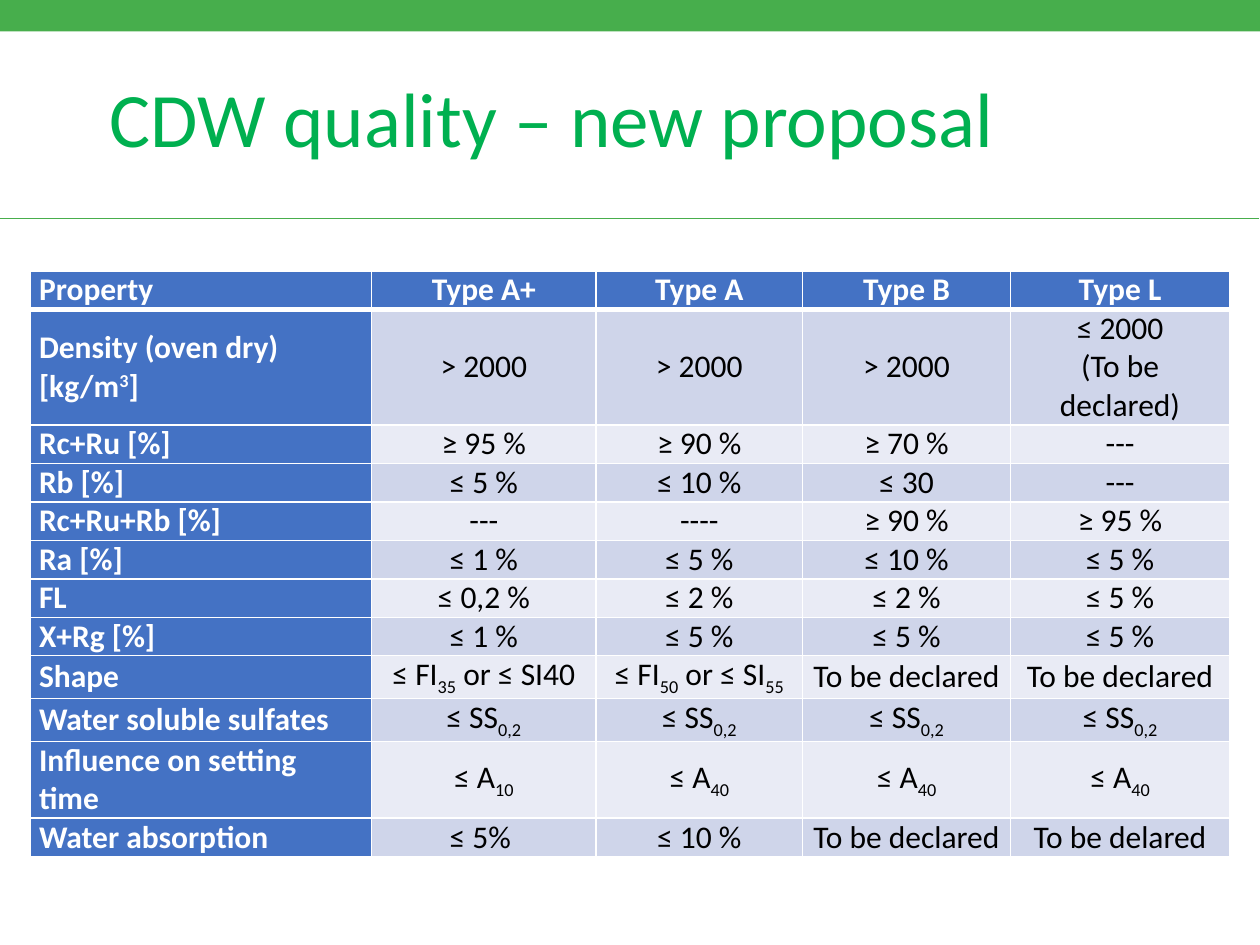
from lxml import etree
from pptx import Presentation
from pptx.dml.color import RGBColor
from pptx.enum.shapes import MSO_CONNECTOR, MSO_SHAPE
from pptx.enum.text import MSO_ANCHOR as Anchor, PP_ALIGN as Align
from pptx.oxml import parse_xml
from pptx.oxml.ns import nsdecls, qn
from pptx.util import Inches, Pt

BANNER_GREEN = "47AE4C"
BASELINES = {"_": "-25000", "^": "30000"}


def color(value):
    return RGBColor.from_string(value)


def write_text(frame, text, size=18, fill="000000", bold=False, align=Align.CENTER):
    paragraph = frame.paragraphs[0]
    paragraph.alignment = align
    for index, line in enumerate(text.split("\n")):
        if index:
            paragraph.add_line_break()
        for part in line.split("|"):
            run = paragraph.add_run()
            run.text = part.lstrip("_^")
            run.font.name = "Calibri"
            run.font.size = Pt(size)
            run.font.bold = bold
            run.font.color.rgb = color(fill)
            if part[:1] in BASELINES:
                run.font._element.set("baseline", BASELINES[part[0]])
    return paragraph


presentation = Presentation()
presentation.slide_width = Inches(10)
presentation.slide_height = Inches(7.5)
slide = presentation.slides.add_slide(presentation.slide_layouts[5])

banner = slide.shapes.add_shape(MSO_SHAPE.RECTANGLE, 0, 0, Inches(10), Inches(0.25))
banner.shadow.inherit = False
banner.fill.solid()
banner.fill.fore_color.rgb = color(BANNER_GREEN)
banner.line.fill.background()

divider = slide.shapes.add_connector(
    MSO_CONNECTOR.STRAIGHT, Inches(-0.01), Inches(1.73), Inches(9.99), Inches(1.73))
divider.line.color.rgb = color(BANNER_GREEN)
divider.line.width = Pt(0.5)
etree.SubElement(divider._element.spPr, qn("a:effectLst"))

title = slide.shapes.title
title.left, title.top = Inches(0.77), Inches(0.4)
title.width, title.height = Inches(8.54), Inches(1.14)
title.text_frame.vertical_anchor = Anchor.MIDDLE
heading = write_text(title.text_frame, "CDW quality – new proposal",
                     size=44, fill="00B050", align=Align.LEFT)
heading.line_spacing = 0.9

rows = [
    ["Property", "Type A+", "Type A", "Type B", "Type L"],
    ["Density (oven dry) [kg/m|^3|]", "> 2000", "> 2000", "> 2000", "≤ 2000\n(To be declared)"],
    ["Rc+Ru [%]", "≥ 95 %", "≥ 90 %", "≥ 70 %", "---"],
    ["Rb [%]", "≤ 5 %", "≤ 10 %", "≤ 30", "---"],
    ["Rc+Ru+Rb [%]", "---", "----", "≥ 90 %", "≥ 95 %"],
    ["Ra [%]", "≤ 1 %", "≤ 5 %", "≤ 10 %", "≤ 5 %"],
    ["FL", "≤ 0,2 %", "≤ 2 %", "≤ 2 %", "≤ 5 %"],
    ["X+Rg [%]", "≤ 1 %", "≤ 5 %", "≤ 5 %", "≤ 5 %"],
    ["Shape", "≤ FI|_35| or ≤ SI40", "≤ FI|_50| or ≤ SI|_55", "To be declared", "To be declared"],
    ["Water soluble sulfates"] + ["≤ SS|_0,2"] * 4,
    ["Influence on setting time", "≤ A|_10"] + ["≤ A|_40"] * 3,
    ["Water absorption", "≤ 5% ", "≤ 10 %", "To be declared", "To be delared"],
]
column_widths = [2.71, 1.78, 1.64, 1.65, 1.74]

table_frame = slide.shapes.add_table(
    len(rows), len(column_widths), Inches(0.24), Inches(2.15), Inches(9.52), Inches(4.5))
table = table_frame.table
table.first_col = True
for column, width in zip(table.columns, column_widths):
    column.width = Inches(width)

for row_index, texts in enumerate(rows):
    table.rows[row_index].height = Inches(0.56 if row_index == 1 else 0.21)
    for column_index, text in enumerate(texts):
        cell = table.cell(row_index, column_index)
        is_heading = row_index == 0 or column_index == 0
        cell.vertical_anchor = Anchor.MIDDLE
        cell.margin_left = cell.margin_right = Inches(0.07)
        cell.margin_top = cell.margin_bottom = 0
        for side in "LRTB":
            under_header = (row_index, side) in [(0, "B"), (1, "T")]
            width = Pt(3 if under_header else 1)
            cell._tc.get_or_add_tcPr().append(parse_xml(
                f'<a:ln{side} {nsdecls("a")} w="{width}"><a:solidFill>'
                f'<a:srgbClr val="FFFFFF"/></a:solidFill></a:ln{side}>'))
        band = "CFD5EA" if row_index % 2 else "E9EBF5"
        cell.fill.solid()
        cell.fill.fore_color.rgb = color("4472C4" if is_heading else band)
        write_text(cell.text_frame, text, bold=is_heading,
                   fill="FFFFFF" if is_heading else "000000",
                   align=Align.CENTER if column_index else Align.LEFT)
table_frame.height = Inches(4.5)

presentation.save("out.pptx")
